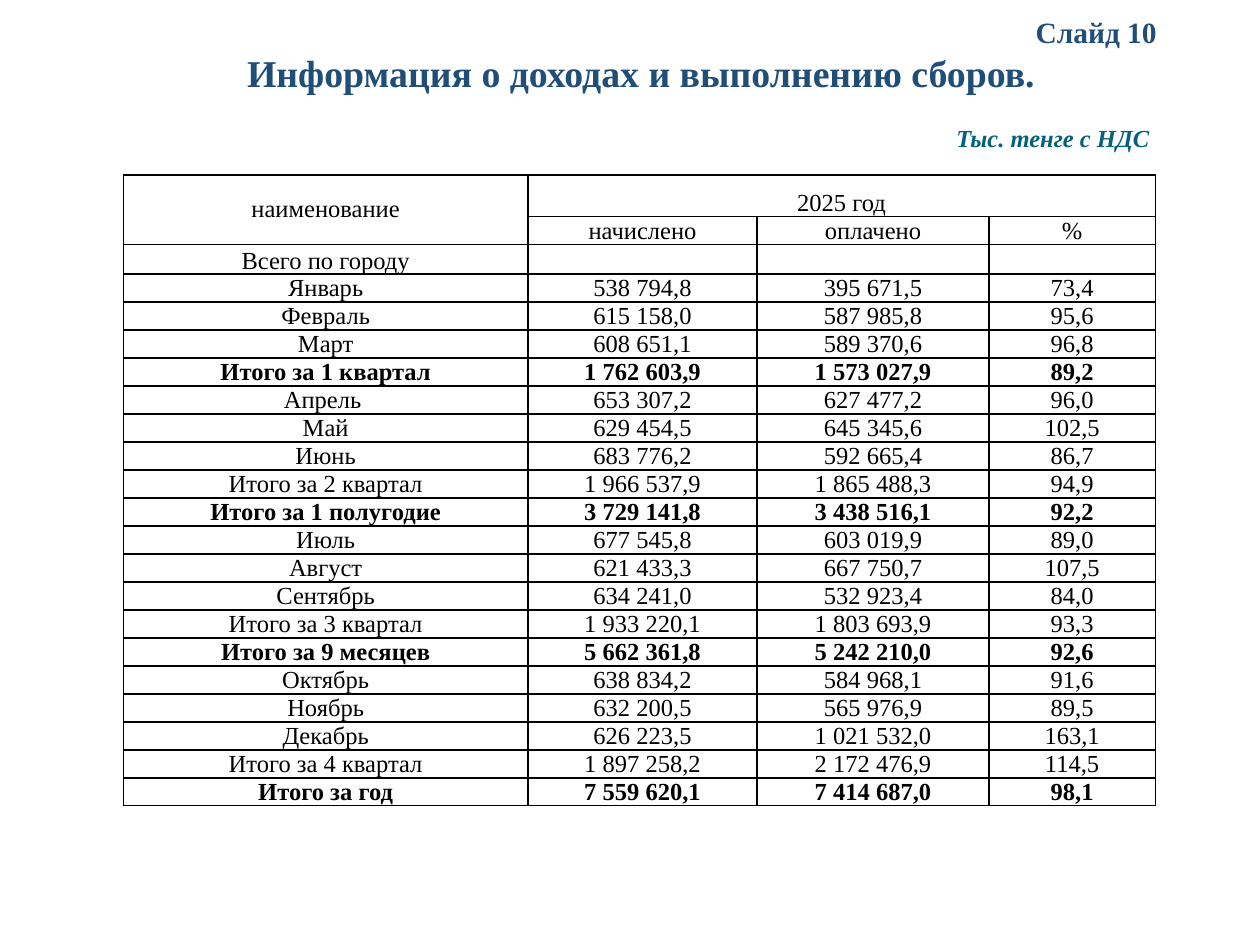
from lxml.etree import SubElement
from pptx import Presentation
from pptx.dml.color import RGBColor
from pptx.enum.text import MSO_ANCHOR, PP_ALIGN
from pptx.oxml.ns import qn
from pptx.util import Inches, Pt

FONT = "Times New Roman"
NAVY, TEAL, BLACK = "1F4E79", "04617B", "000000"
COLUMN_WIDTHS = (3.21, 1.82, 1.84, 1.32)
HEADER_HEIGHT, ROW_HEIGHT = 0.33, 0.22
ROWS = (
    ("наименование", "2025 год", "", ""),
    ("", "начислено", "оплачено", "%"),
    ("Всего по городу", "", "", ""),
    ("Январь", "538 794,8", "395 671,5", "73,4"),
    ("Февраль", "615 158,0", "587 985,8", "95,6"),
    ("Март", "608 651,1", "589 370,6", "96,8"),
    ("Итого за 1 квартал", "1 762 603,9", "1 573 027,9", "89,2"),
    ("Апрель ", "653 307,2", "627 477,2", "96,0"),
    ("Май", "629 454,5", "645 345,6", "102,5"),
    ("Июнь", "683 776,2", "592 665,4", "86,7"),
    ("Итого за 2 квартал", "1 966 537,9", "1 865 488,3", "94,9"),
    ("Итого за 1 полугодие", "3 729 141,8", "3 438 516,1", "92,2"),
    ("Июль", "677 545,8", "603 019,9", "89,0"),
    ("Август", "621 433,3", "667 750,7", "107,5"),
    ("Сентябрь", "634 241,0", "532 923,4", "84,0"),
    ("Итого за 3 квартал", "1 933 220,1", "1 803 693,9", "93,3"),
    ("Итого за 9 месяцев", "5 662 361,8", "5 242 210,0", "92,6"),
    ("Октябрь", "638 834,2", "584 968,1", "91,6"),
    ("Ноябрь", "632 200,5", "565 976,9", "89,5"),
    ("Декабрь", "626 223,5", "1 021 532,0", "163,1"),
    ("Итого за 4 квартал", "1 897 258,2", "2 172 476,9", "114,5"),
    ("Итого за год", "7 559 620,1", "7 414 687,0", "98,1"),
)
BOLD_ROWS = {"Итого за 1 квартал", "Итого за 1 полугодие", "Итого за 9 месяцев", "Итого за год"}


def style_font(font, size, color, bold=False, italic=False):
    """Set typeface, size, colour and weight of a font."""
    font.name = FONT
    font.size = Pt(size)
    font.bold = bold
    font.italic = italic
    font.color.rgb = RGBColor.from_string(color)


def set_margins(holder, sides, ends):
    """Set the inner margins of a text frame or a cell."""
    holder.margin_left = holder.margin_right = Inches(sides)
    holder.margin_top = holder.margin_bottom = Inches(ends)


def add_heading(page, text, place, size, color, spacing, align=PP_ALIGN.CENTER, italic=False):
    """Add a bold, vertically centred line of text."""
    frame = page.shapes.add_textbox(*map(Inches, place)).text_frame
    frame.word_wrap = True
    frame.vertical_anchor = MSO_ANCHOR.MIDDLE
    set_margins(frame, 0.07, 0.04)
    paragraph = frame.paragraphs[0]
    paragraph.text = text
    paragraph.alignment = align
    paragraph.line_spacing = spacing
    style_font(paragraph.font, size, color, True, italic)


def add_borders(cell):
    """Draw a thin black line on every side of a cell."""
    properties = cell._tc.get_or_add_tcPr()
    for side in ("lnL", "lnR", "lnT", "lnB"):
        line = SubElement(properties, qn(f"a:{side}"), w=str(Pt(1)))
        fill = SubElement(line, qn("a:solidFill"))
        SubElement(fill, qn("a:srgbClr"), val=BLACK)


def fill_cell(cell, text, bold):
    """Write and format one table cell."""
    add_borders(cell)
    cell.fill.background()
    cell.vertical_anchor = MSO_ANCHOR.BOTTOM
    set_margins(cell, 0.01, 0)
    paragraph = cell.text_frame.paragraphs[0]
    paragraph.alignment = PP_ALIGN.CENTER
    paragraph.line_spacing = 0.95
    style_font(paragraph.font, 14, BLACK, bold)
    if text:
        paragraph.text = text
    else:
        SubElement(paragraph._p, qn("a:endParaRPr"), sz="1400")


def add_income_table(page):
    """Add the table of monthly charges and payments."""
    height = HEADER_HEIGHT + ROW_HEIGHT * (len(ROWS) - 1)
    place = map(Inches, (0.98, 1.39, sum(COLUMN_WIDTHS), height))
    table = page.shapes.add_table(len(ROWS), len(COLUMN_WIDTHS), *place).table
    table.first_row = table.horz_banding = False
    for column, width in zip(table.columns, COLUMN_WIDTHS):
        column.width = Inches(width)
    for index, values in enumerate(ROWS):
        table.rows[index].height = Inches(ROW_HEIGHT if index else HEADER_HEIGHT)
        for position, text in enumerate(values):
            fill_cell(table.cell(index, position), text, values[0] in BOLD_ROWS)
    table.cell(0, 0).merge(table.cell(1, 0))
    table.cell(0, 1).merge(table.cell(0, 3))
    table.cell(0, 0).vertical_anchor = MSO_ANCHOR.MIDDLE


def main():
    """Build the slide and save it."""
    deck = Presentation()
    deck.slide_width, deck.slide_height = Inches(10), Inches(7.5)
    page = deck.slides.add_slide(deck.slide_layouts[6])
    add_heading(page, "Информация о доходах и выполнению сборов. ",
                (0.75, 0.44, 8.75, 0.31), 21.6, NAVY, 0.9)
    add_heading(page, "Тыс. тенге с НДС", (7.52, 0.68, 2.14, 0.86), 14, TEAL, 0.9,
                PP_ALIGN.JUSTIFY, True)
    add_heading(page, "Слайд 10", (7.36, 0.13, 2.68, 0.31), 16.8, NAVY, 0.7)
    add_income_table(page)
    deck.save("out.pptx")


if __name__ == "__main__":
    main()
